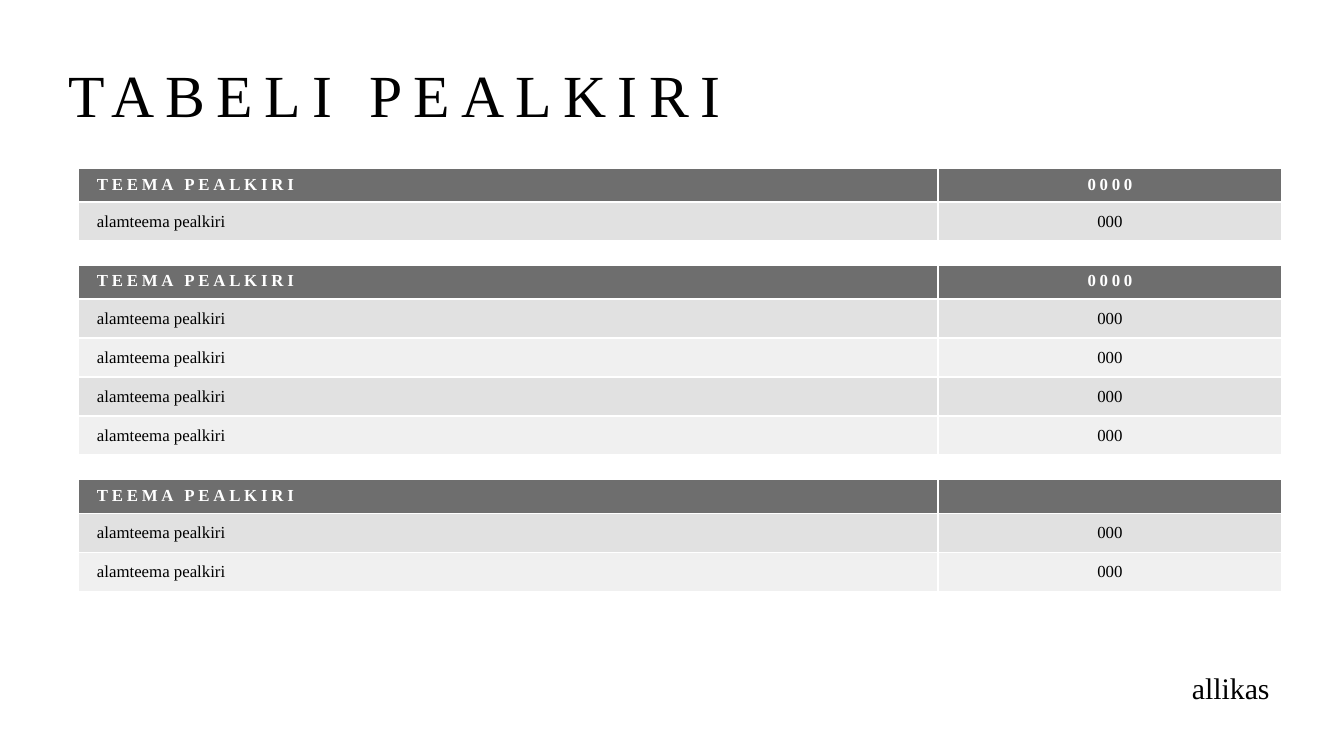
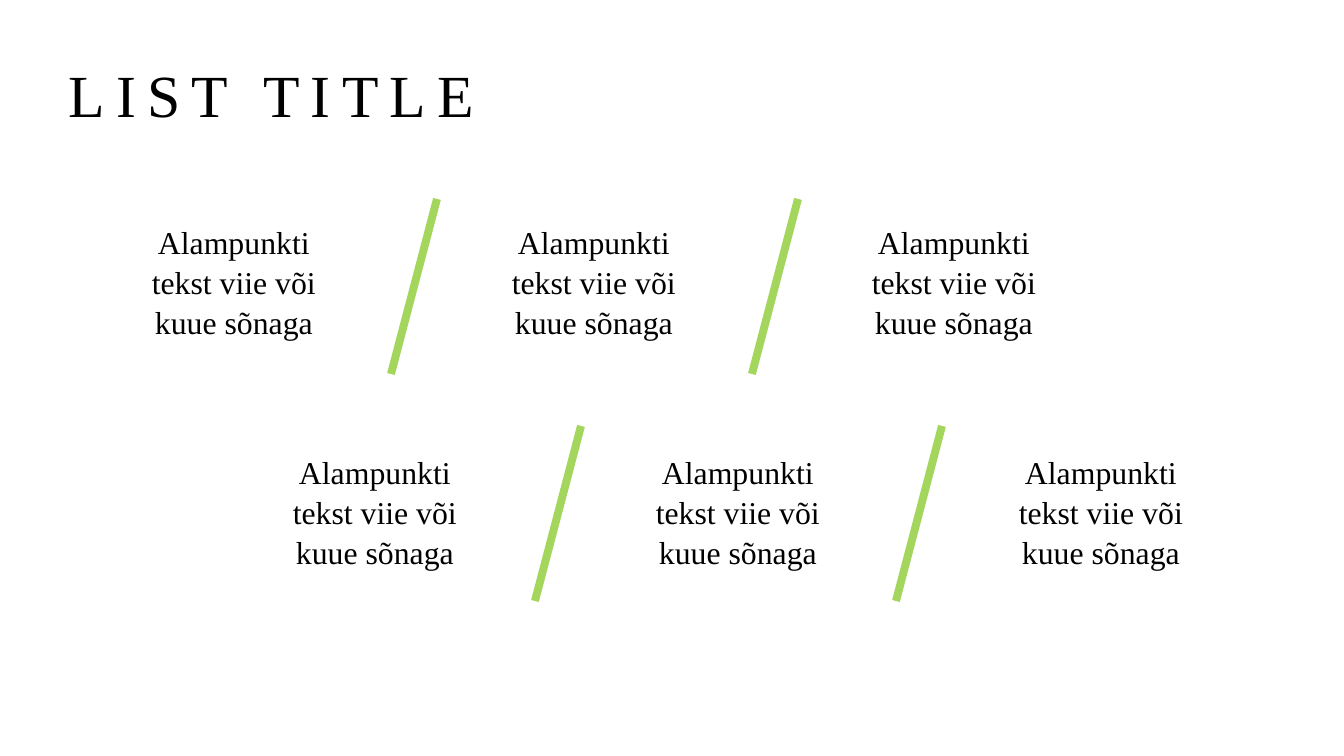
from lxml.etree import SubElement
from pptx import Presentation
from pptx.dml.color import RGBColor
from pptx.enum.shapes import MSO_CONNECTOR
from pptx.enum.text import MSO_ANCHOR, MSO_AUTO_SIZE, PP_ALIGN
from pptx.oxml.ns import qn
from pptx.util import Pt

PX = 9144000 / 1344
FONT = "Times New Roman"
BLACK = RGBColor(0x00, 0x00, 0x00)
WHITE = RGBColor(0xFF, 0xFF, 0xFF)
HEADER_GREY = RGBColor(0x6E, 0x6E, 0x6E)
BANDS = (RGBColor(0xE1, 0xE1, 0xE1), RGBColor(0xF0, 0xF0, 0xF0))
GREEN = RGBColor(0xA4, 0xD6, 0x5E)

TITLE_BOX = (55, 31, 1230, 125)
TITLE = {"size": Pt(32), "bold": False}
HEADER = {"size": Pt(9), "bold": True}
ROW = {"size": Pt(9), "bold": False}
SOURCE = {"size": Pt(16), "bold": False}
POINT = {"size": Pt(17), "bold": False}

HEADER_HEIGHT, ROW_HEIGHT, TABLE_GAP = 34, 39, 24
TOPICS = (("0000", 1), ("0000", 4), ("", 2))
POINT_LINES = ("Alampunkti", "tekst viie või", "kuue sõnaga")


def px(*lengths):
    """Turn pixel lengths into EMU."""
    return [round(length * PX) for length in lengths]


def apply(target, values):
    """Set each attribute of the target from a dict."""
    for name, value in values.items():
        setattr(target, name, value)


def write(para, text, style, color=BLACK, align=PP_ALIGN.LEFT, tracking=0):
    """Write one styled run, or size an empty paragraph."""
    para.alignment = align
    if not text:
        end = SubElement(para._p, qn("a:endParaRPr"))
        end.set("sz", str(round(style["size"].pt * 100)))
        return
    span = para.add_run()
    span.text = text
    apply(span.font, {"name": FONT, **style})
    span.font.color.rgb = color
    if tracking:
        span._r.get_or_add_rPr().set("spc", str(tracking * 100))


def add_page(deck, title):
    """Add a title-only slide with its spaced title."""
    page = deck.slides.add_slide(deck.slide_layouts[5])
    box = page.shapes.title
    apply(box, dict(zip(("left", "top", "width", "height"), px(*TITLE_BOX))))
    apply(box.text_frame, {"vertical_anchor": MSO_ANCHOR.MIDDLE,
                           "word_wrap": True, "auto_size": MSO_AUTO_SIZE.NONE})
    write(box.text_frame.paragraphs[0], title, TITLE, tracking=6)
    return page


def add_text(page, box, anchor, lines, style, align, spacing, fit=MSO_AUTO_SIZE.NONE):
    """Add a text box with one paragraph per line."""
    frame = page.shapes.add_textbox(*px(*box)).text_frame
    apply(frame, {"word_wrap": True, "vertical_anchor": anchor, "auto_size": fit})
    for index, line in enumerate(lines):
        para = frame.add_paragraph() if index else frame.paragraphs[0]
        para.line_spacing = spacing
        write(para, line, style, align=align)


def add_topic_table(page, left, top, total, count):
    """Add a topic header with banded rows and return the table height."""
    widths = (860, 344)
    heights = [HEADER_HEIGHT] + [ROW_HEIGHT] * count
    size = (sum(widths), sum(heights))
    table = page.shapes.add_table(count + 1, 2, *px(left, top, *size)).table
    for column, width in zip(table.columns, px(*widths)):
        column.width = width
    inset_x, inset_y = px(19, 7)
    for index, (row, height) in enumerate(zip(table.rows, px(*heights))):
        row.height = height
        if index == 0:
            texts, style, color, tracking = ("TEEMA PEALKIRI", total), HEADER, WHITE, 2
            fill, anchor = HEADER_GREY, MSO_ANCHOR.TOP
        else:
            texts, style, color, tracking = ("alamteema pealkiri", "000"), ROW, BLACK, 0
            fill, anchor = BANDS[(index - 1) % 2], MSO_ANCHOR.MIDDLE
        for cell, text, align in zip(row.cells, texts, (PP_ALIGN.LEFT, PP_ALIGN.CENTER)):
            apply(cell, {"margin_left": inset_x, "margin_right": inset_x,
                         "margin_top": inset_y, "margin_bottom": inset_y,
                         "vertical_anchor": anchor})
            cell.fill.solid()
            cell.fill.fore_color.rgb = fill
            write(cell.text_frame.paragraphs[0], text, style, color, align, tracking)
    return size[1]


def add_slash(page, left, top, width, height):
    """Draw a green slash from top right to bottom left."""
    ends = px(left + width, top, left, top + height)
    slash = page.shapes.add_connector(MSO_CONNECTOR.STRAIGHT, *ends)
    slash.line.color.rgb = GREEN
    slash.line.width = Pt(4.25)
    SubElement(slash._element.spPr, qn("a:effectLst"))


def add_point_row(page, left, top, step, slash_left, slash_top):
    """Place three points with a slash in each gap."""
    for index in range(2):
        add_slash(page, slash_left + index * 361, slash_top, 46, 175)
    for index in range(3):
        add_text(page, (left + index * step, top, 220, 129), MSO_ANCHOR.MIDDLE,
                 POINT_LINES, POINT, PP_ALIGN.CENTER, 1.05,
                 MSO_AUTO_SIZE.SHAPE_TO_FIT_TEXT)


def build_table_page(deck):
    """Build the slide of stacked topic tables."""
    page = add_page(deck, "TABELI PEALKIRI")
    top = 168
    for total, count in TOPICS:
        top += add_topic_table(page, 78, top, total, count) + TABLE_GAP
    add_text(page, (405, 649, 878, 63), MSO_ANCHOR.BOTTOM, ("allikas",),
             SOURCE, PP_ALIGN.RIGHT, 1.2)


def build_list_page(deck):
    """Build the slide with two staggered rows of points."""
    page = add_page(deck, "LIST TITLE")
    add_point_row(page, 124, 216, 360, 391, 199)
    add_point_row(page, 265, 446, 363, 535, 426)


def main():
    """Build and save the deck."""
    deck = Presentation()
    deck.slide_width, deck.slide_height = px(1344, 756)
    build_table_page(deck)
    build_list_page(deck)
    deck.save("out.pptx")


if __name__ == "__main__":
    main()
